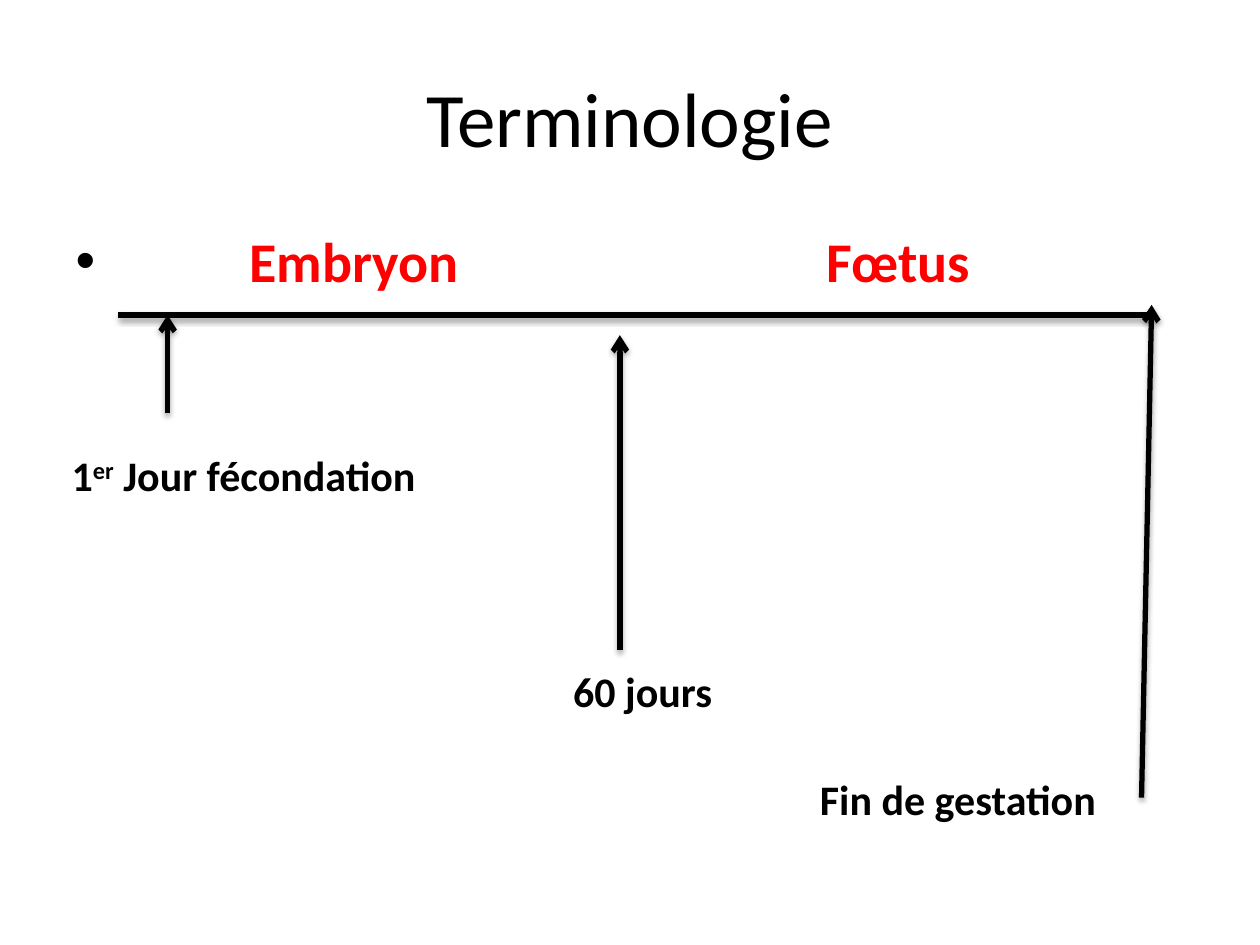
from lxml.etree import SubElement
from pptx import Presentation
from pptx.dml.color import RGBColor
from pptx.enum.shapes import MSO_CONNECTOR
from pptx.enum.text import MSO_ANCHOR, MSO_AUTO_SIZE, PP_ALIGN
from pptx.oxml import parse_xml
from pptx.oxml.ns import nsdecls, qn
from pptx.util import Inches, Pt

BLACK = RGBColor(0, 0, 0)
RED = RGBColor(255, 0, 0)
COLUMNS, ROWS = 100, 75

SHADOW = (
    f'<a:effectLst {nsdecls("a")}>'
    '<a:outerShdw blurRad="40000" dist="23000" dir="5400000" rotWithShape="0">'
    '<a:srgbClr val="000000"><a:alpha val="35000"/></a:srgbClr>'
    '</a:outerShdw></a:effectLst>'
)


class TimelineSlide:
    """Style and current slide; lengths are grid columns and rows."""

    font = "Calibri"
    line_width = Pt(3)

    def __init__(self, deck):
        self.slide = deck.slides.add_slide(deck.slide_layouts[1])
        self.column = deck.slide_width / COLUMNS
        self.row = deck.slide_height / ROWS

    def grid(self, column, row):
        return round(column * self.column), round(row * self.row)

    def place(self, shape, column, row, columns, rows):
        shape.left, shape.top = self.grid(column, row)
        shape.width, shape.height = self.grid(columns, rows)

    def style(self, paragraph, size, color=BLACK, bold=False):
        for run in paragraph.runs:
            run.font.name = self.font
            run.font.size = Pt(size)
            run.font.bold = bold
            run.font.color.rgb = color

    def title(self, text, *area):
        heading = self.slide.shapes.title
        self.place(heading, *area)
        heading.text_frame.text = text
        heading.text_frame.vertical_anchor = MSO_ANCHOR.MIDDLE
        paragraph = heading.text_frame.paragraphs[0]
        paragraph.alignment = PP_ALIGN.CENTER
        self.style(paragraph, 44)

    def stages(self, names, tab_inches, *area):
        """One bulleted line with each stage name at its own tab stop."""
        body = self.slide.placeholders[1]
        self.place(body, *area)
        paragraph = body.text_frame.paragraphs[0]
        paragraph.text = "".join(f"\t{name}" for name in names)
        self.style(paragraph, 32, RED, bold=True)
        properties = paragraph._p.get_or_add_pPr()
        properties.set("marL", "0")
        properties.set("indent", "0")
        bullet_color = SubElement(properties, qn("a:buClr"))
        SubElement(bullet_color, qn("a:srgbClr"), val=str(BLACK))
        SubElement(properties, qn("a:buFont"), typeface="Arial")
        SubElement(properties, qn("a:buChar"), char="•")
        tabs = SubElement(properties, qn("a:tabLst"))
        for position in tab_inches:
            SubElement(tabs, qn("a:tab"), pos=str(Inches(position)), algn="l")

    def line(self, start, end, arrow=False):
        stroke = self.slide.shapes.add_connector(
            MSO_CONNECTOR.STRAIGHT, *self.grid(*start), *self.grid(*end))
        stroke.line.color.rgb = BLACK
        stroke.line.width = self.line_width
        if arrow:
            SubElement(stroke.line._get_or_add_ln(), qn("a:tailEnd"), type="arrow")
        stroke._element.spPr.append(parse_xml(SHADOW))

    def label(self, parts, *area):
        """Bold label; each part is (text, superscript)."""
        caption = self.slide.shapes.add_textbox(0, 0, 0, 0)
        self.place(caption, *area)
        frame = caption.text_frame
        frame.word_wrap = True
        frame.auto_size = MSO_AUTO_SIZE.SHAPE_TO_FIT_TEXT
        paragraph = frame.paragraphs[0]
        for text, superscript in parts:
            run = paragraph.add_run()
            run.text = text
            if superscript:
                run.font._element.set("baseline", "30000")
        self.style(paragraph, 24, bold=True)


def main():
    deck = Presentation()
    deck.slide_width, deck.slide_height = Inches(10), Inches(7.5)
    timeline = TimelineSlide(deck)

    # Title and stage names
    timeline.title("Terminologie", 5, 3, 90, 12.5)
    timeline.stages(("Embryon", "Fœtus"), (1.38, 5.96), 5, 17.5, 90, 49.5)

    # Time axis and its milestones
    timeline.line((9.4, 25), (91.4, 25))
    milestones = (
        ((13.3, 32.8), (13.3, 25)),
        ((49.2, 51.6), (49.2, 26.6)),
        ((90.6, 63.3), (91.4, 24.2)),
    )
    for start, end in milestones:
        timeline.line(start, end, arrow=True)

    # Milestone labels
    first_day = (("1", False), ("er", True), (" Jour fécondation", False))
    timeline.label(first_day, 4.7, 35.2, 32.8, 5)
    timeline.label((("60 jours", False),), 44.5, 52.3, 17.2, 5)
    timeline.label((("Fin de gestation", False),), 64.1, 60.9, 26.6, 5)

    deck.save("out.pptx")


if __name__ == "__main__":
    main()
